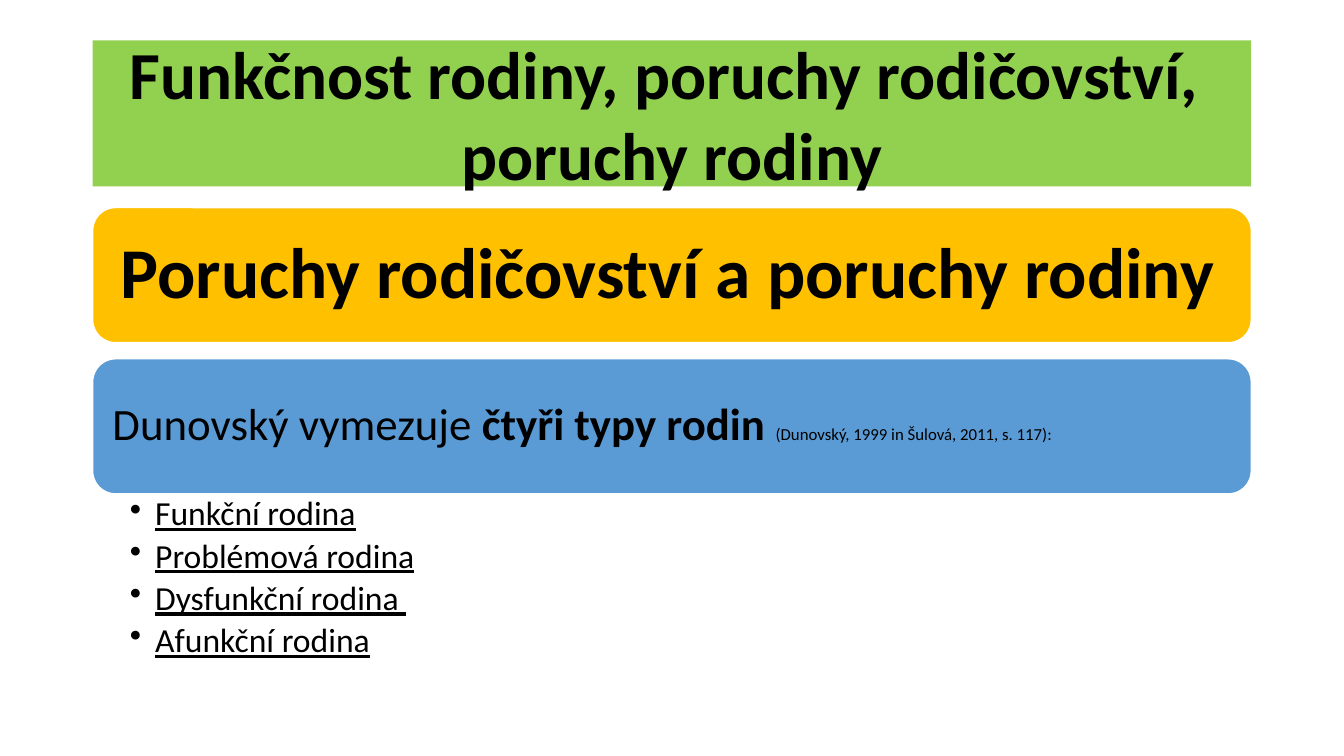
import dataclasses
import typing

import lxml.etree
import pptx
import pptx.dml.color
import pptx.enum.shapes
import pptx.enum.text
import pptx.oxml.ns
import pptx.util

SHAPE = pptx.enum.shapes.MSO_SHAPE
ALIGN = pptx.enum.text.PP_ALIGN
ANCHOR = pptx.enum.text.MSO_ANCHOR
Pt = pptx.util.Pt
Inches = pptx.util.Inches

WIDTH, HEIGHT = Inches(13.33), Inches(7.5)
COL, ROW = WIDTH / 29, HEIGHT / 75
LEFT_COL, SPAN = 2, 25
BULLET_INDENT = Inches(0.25)


@dataclasses.dataclass
class Run:
    text: str
    size: float
    bold: bool = False
    underline: bool = False


@dataclasses.dataclass
class Panel:
    """A full-width block; top and height in rows, insets in inches."""
    top: float
    height: float
    paragraphs: list[list[Run]]
    insets: tuple[float, float, float, float]
    shape: typing.Optional[SHAPE] = None
    fill: str = ""
    line: str = ""
    bullets: bool = False
    anchor: ANCHOR = ANCHOR.MIDDLE
    paragraph_format: dict = dataclasses.field(default_factory=dict)


FAMILY_TYPES = ["Funkční rodina", "Problémová rodina", "Dysfunkční rodina ", "Afunkční rodina"]
LEFT_TIGHT = {"alignment": ALIGN.LEFT, "line_spacing": 0.9}

PANELS = [
    Panel(4, 14.5,
          [[Run("Funkčnost rodiny, poruchy rodičovství, \vporuchy rodiny", 48, bold=True)]],
          (0.1, 0.05, 0.1, 0.05), SHAPE.RECTANGLE, "92D050",
          paragraph_format={"alignment": ALIGN.CENTER}),
    Panel(20.6, 13.4,
          [[Run("Poruchy rodičovství a poruchy rodiny", 51, bold=True)]],
          (0.21,) * 4, SHAPE.ROUNDED_RECTANGLE, "FFC000", "FFFFFF",
          paragraph_format=LEFT_TIGHT),
    Panel(35.6, 13.4,
          [[Run("Dunovský vymezuje ", 32),
            Run("čtyři typy rodin ", 32, bold=True),
            Run("(Dunovský, 1999 in Šulová, 2011, s. 117):", 12)]],
          (0.13,) * 4, SHAPE.ROUNDED_RECTANGLE, "5B9BD5", "FFFFFF",
          paragraph_format=LEFT_TIGHT),
    Panel(49, 17.9,
          [[Run(name, 24, underline=True)] for name in FAMILY_TYPES],
          (0.37, 0.03, 0.19, 0.03), bullets=True, anchor=ANCHOR.TOP,
          paragraph_format=LEFT_TIGHT | {"space_after": Pt(4.3)}),
]


def rgb(value: str) -> pptx.dml.color.RGBColor:
    return pptx.dml.color.RGBColor.from_string(value)


def set_all(target: typing.Any, values: dict) -> None:
    for name, value in values.items():
        setattr(target, name, value)


def add_bullet(p: typing.Any) -> None:
    pPr = p._p.get_or_add_pPr()
    pPr.set("marL", str(BULLET_INDENT))
    pPr.set("indent", str(-BULLET_INDENT))
    lxml.etree.SubElement(pPr, pptx.oxml.ns.qn("a:buChar")).set("char", "•")


def add_run(p: typing.Any, run: Run) -> None:
    """Append the run, turning each vertical tab into a line break."""
    for i, text in enumerate(run.text.split("\v")):
        if i:
            p.add_line_break()
        r = p.add_run()
        r.text = text
        set_all(r.font, {"name": "Calibri", "size": Pt(run.size),
                         "bold": run.bold, "underline": run.underline})
        r.font.color.rgb = rgb("000000")


def draw_panel(s: typing.Any, panel: Panel) -> None:
    box = [round(n) for n in (LEFT_COL * COL, panel.top * ROW, SPAN * COL, panel.height * ROW)]
    if panel.shape is None:
        sp = s.shapes.add_textbox(*box)
    else:
        sp = s.shapes.add_shape(panel.shape, *box)
        sp.shadow.inherit = False
        sp.fill.solid()
        sp.fill.fore_color.rgb = rgb(panel.fill)
        if panel.line:
            sp.line.color.rgb = rgb(panel.line)
            sp.line.width = Pt(1)
        else:
            sp.line.fill.background()
    if panel.shape == SHAPE.ROUNDED_RECTANGLE:
        sp.adjustments[0] = 0.17

    tf = sp.text_frame
    sides = ("margin_left", "margin_top", "margin_right", "margin_bottom")
    set_all(tf, {"word_wrap": True, "vertical_anchor": panel.anchor}
            | {side: Inches(n) for side, n in zip(sides, panel.insets)})
    for i, runs in enumerate(panel.paragraphs):
        p = tf.add_paragraph() if i else tf.paragraphs[0]
        set_all(p, panel.paragraph_format)
        if panel.bullets:
            add_bullet(p)
        for run in runs:
            add_run(p, run)


def main() -> None:
    prs = pptx.Presentation()
    set_all(prs, {"slide_width": WIDTH, "slide_height": HEIGHT})
    s = prs.slides.add_slide(prs.slide_layouts[6])
    for panel in PANELS:
        draw_panel(s, panel)
    prs.save("out.pptx")


if __name__ == "__main__":
    main()
